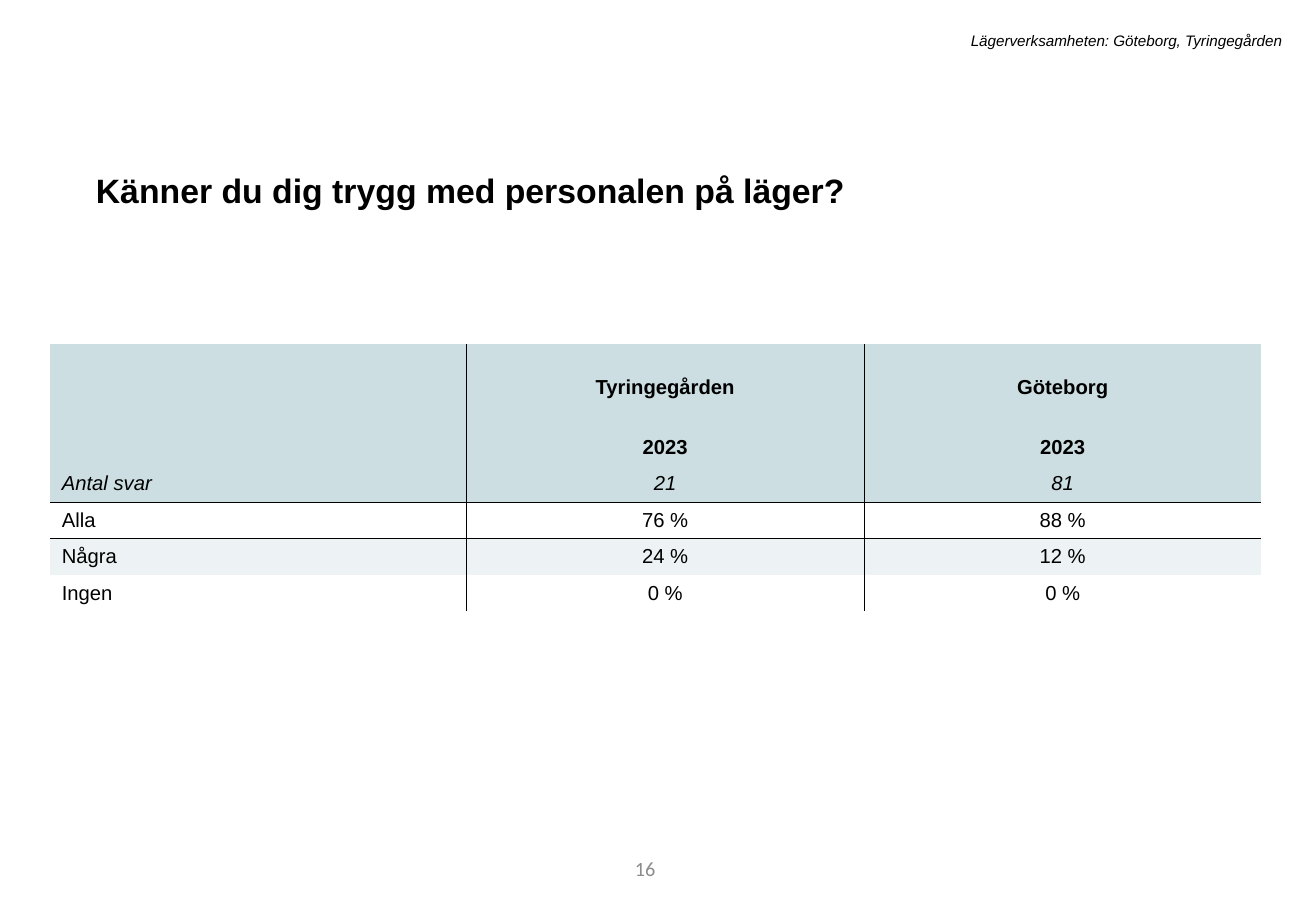
import pptx
import pptx.dml.color
import pptx.enum.text
import pptx.oxml.ns
import pptx.util
from dataclasses import dataclass
from lxml import etree

Cm = pptx.util.Cm
Pt = pptx.util.Pt
RGB = pptx.dml.color.RGBColor.from_string
ALIGN = pptx.enum.text.PP_ALIGN
ANCHOR = pptx.enum.text.MSO_ANCHOR
qn = pptx.oxml.ns.qn

TITLE = "Känner du dig trygg med personalen på läger?"
SOURCE = "Lägerverksamheten: Göteborg, Tyringegården"
PAGE = "16"
HEADER = [
    ("", "Tyringegården", "Göteborg"),
    ("", "2023", "2023"),
]
COUNTS = ("Antal svar", "21", "81")
ANSWERS = [
    ("Alla", "76 %", "88 %"),
    ("Några", "24 %", "12 %"),
    ("Ingen", "0 %", "0 %"),
]
COLUMN_WIDTHS = [Cm(8.71), Cm(8.31), Cm(8.31)]
HEADER_HEIGHT, ROW_HEIGHT = Cm(1.27), Cm(0.76)


@dataclass(frozen=True)
class Theme:
    font: str = "Arial"
    page_font: str = "Calibri"
    text: str = "000000"
    muted: str = "8C8C8C"
    header: str = "CCDEE1"
    band: str = "EDF3F4"
    title_size: int = 20
    table_size: int = 12
    page_size: int = 12
    source_size: int = 9
    border: float = 0.25
    no_table_style: str = "{2D5ABB26-0587-4C30-8999-92F81FD0307C}"


THEME = Theme()


def format_paragraph(p, size, align, color=THEME.text, name=THEME.font,
                     bold=False, italic=False):
    p.alignment = align
    p.font.name, p.font.size = name, Pt(size)
    p.font.bold, p.font.italic = bold, italic
    p.font.color.rgb = RGB(color)


def add_label(slide, text, box, anchor, size, **style):
    tf = slide.shapes.add_textbox(*box).text_frame
    tf.word_wrap = True
    tf.vertical_anchor = anchor
    tf.text = text
    format_paragraph(tf.paragraphs[0], size, ALIGN.RIGHT, **style)


def add_borders(cell, sides):
    """Draw the sides named in schema order: L, R, T, B."""
    tc_pr = cell._tc.get_or_add_tcPr()
    for side in sides:
        ln = etree.SubElement(tc_pr, qn(f"a:ln{side}"), w=str(Pt(THEME.border)))
        fill = etree.SubElement(ln, qn("a:solidFill"))
        etree.SubElement(fill, qn("a:srgbClr"), val=THEME.text)


def add_title(slide):
    title = slide.shapes.title
    title.left, title.top, title.width, title.height = (
        Cm(1.75), Cm(3.25), Cm(23.88), Cm(1.19))
    tf = title.text_frame
    tf.word_wrap = True
    tf.vertical_anchor = ANCHOR.TOP
    tf.text = TITLE
    p = tf.paragraphs[0]
    p.line_spacing, p.space_before = 1.2, Pt(10)
    format_paragraph(p, THEME.title_size, ALIGN.LEFT, bold=True)


def add_answer_table(slide):
    rows = HEADER + [COUNTS] + ANSWERS
    count_row = len(HEADER)
    heights = [HEADER_HEIGHT if r < count_row else ROW_HEIGHT
               for r in range(len(rows))]
    table = slide.shapes.add_table(
        len(rows), len(COLUMN_WIDTHS), Cm(1.04), Cm(7.19),
        sum(COLUMN_WIDTHS), sum(heights)).table
    table.first_row = table.horz_banding = False
    table._tbl.tblPr.find(qn("a:tableStyleId")).text = THEME.no_table_style
    for column, width in zip(table.columns, COLUMN_WIDTHS):
        column.width = width

    last_column = len(COLUMN_WIDTHS) - 1
    for r, (values, height) in enumerate(zip(rows, heights)):
        table.rows[r].height = height
        for c, value in enumerate(values):
            cell = table.cell(r, c)
            sides = ("L" if c > 0 else "") + ("R" if c < last_column else "")
            sides += {count_row: "B", count_row + 1: "T"}.get(r, "")
            add_borders(cell, sides)
            if r <= count_row:
                cell.fill.solid()
                cell.fill.fore_color.rgb = RGB(THEME.header)
            elif (r - count_row) % 2 == 0:
                cell.fill.solid()
                cell.fill.fore_color.rgb = RGB(THEME.band)
            else:
                cell.fill.background()
            cell.vertical_anchor = ANCHOR.BOTTOM if r < count_row else ANCHOR.MIDDLE
            cell.text = value
            format_paragraph(
                cell.text_frame.paragraphs[0], THEME.table_size,
                ALIGN.CENTER if c else ALIGN.LEFT,
                bold=r < count_row, italic=r == count_row)


def main():
    prs = pptx.Presentation()
    prs.slide_width, prs.slide_height = Cm(27.51), Cm(19.05)
    slide = prs.slides.add_slide(prs.slide_layouts[5])
    add_label(slide, PAGE, (Cm(7.75), Cm(17.65), Cm(6.2), Cm(1.02)),
              ANCHOR.MIDDLE, THEME.page_size,
              color=THEME.muted, name=THEME.page_font)
    add_title(slide)
    add_label(slide, SOURCE, (Cm(4.55), Cm(0.53), Cm(22.5), Cm(0.64)),
              ANCHOR.TOP, THEME.source_size, italic=True)
    add_answer_table(slide)
    prs.save("out.pptx")


if __name__ == "__main__":
    main()
